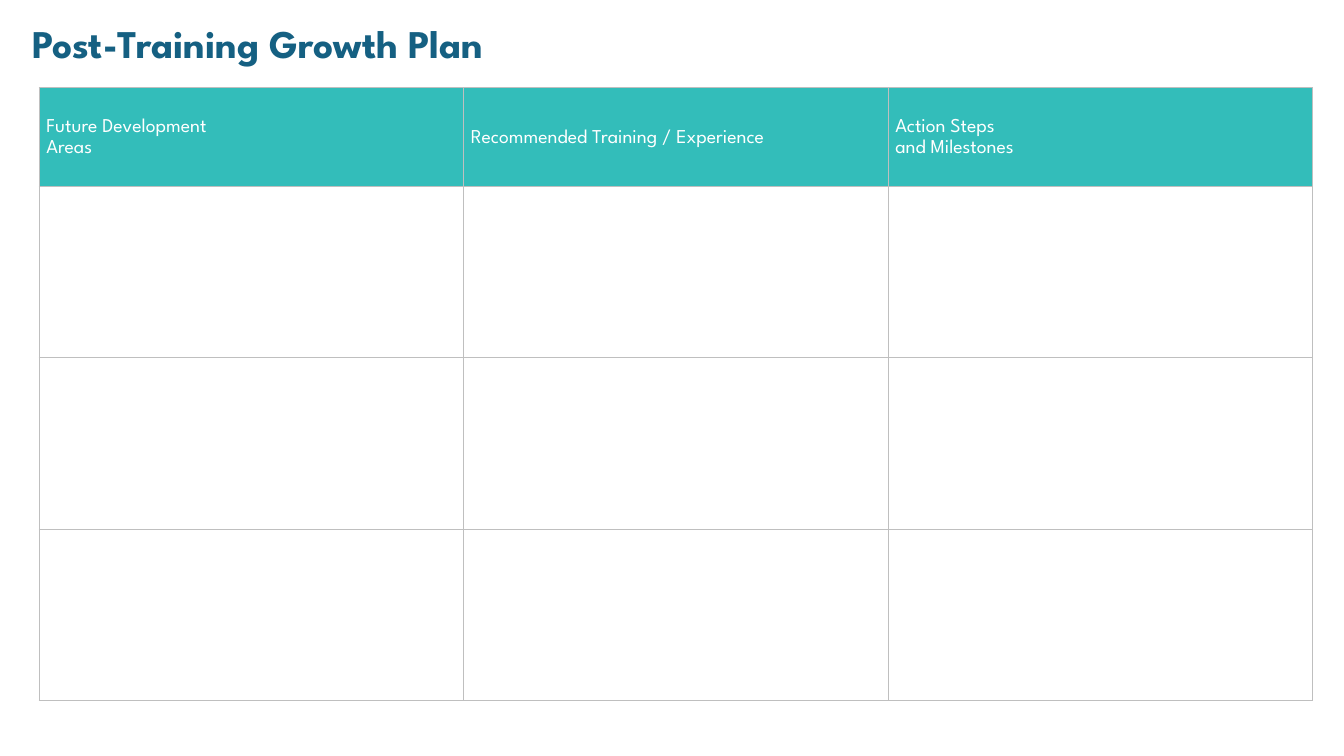
from lxml.etree import SubElement
from pptx import Presentation
from pptx.dml.color import RGBColor
from pptx.enum.text import MSO_ANCHOR as Anchor, MSO_AUTO_SIZE as AutoSize
from pptx.oxml.ns import qn
from pptx.util import Inches, Pt

TITLE = "Post-Training Growth Plan"
HEADERS = [
    "Future Development \vAreas",
    "Recommended Training / Experience",
    "Action Steps \vand Milestones",
]
EMPTY_ROWS = 3
FONT = "League Spartan"
COLORS = {"title": "156082", "header": "33BDBA", "header_text": "FFFFFF", "border": "BFBFBF"}
COLUMN_WIDTH, HEADER_HEIGHT, ROW_HEIGHT = 4.21, 0.98, 1.7


def style_font(font, size, color, bold=False):
    font.name = FONT
    font.size = Pt(size)
    font.bold = bold
    font.color.rgb = RGBColor.from_string(COLORS[color])


def add_borders(cell):
    properties = cell._tc.get_or_add_tcPr()
    for position, side in enumerate(("lnL", "lnR", "lnT", "lnB")):
        line = SubElement(properties, qn(f"a:{side}"), w=str(Pt(1)))
        fill = SubElement(line, qn("a:solidFill"))
        SubElement(fill, qn("a:srgbClr"), val=COLORS["border"])
        properties.insert(position, line)


def add_title(slide):
    box = slide.shapes.add_textbox(Inches(0.22), Inches(0.14), Inches(8.08), Inches(0.57))
    frame = box.text_frame
    frame.word_wrap = True
    frame.auto_size = AutoSize.SHAPE_TO_FIT_TEXT
    frame.text = TITLE
    style_font(frame.paragraphs[0].font, 28, "title", bold=True)


def add_plan_table(slide):
    heights = [HEADER_HEIGHT] + [ROW_HEIGHT] * EMPTY_ROWS
    table = slide.shapes.add_table(
        len(heights), len(HEADERS), Inches(0.39), Inches(0.87),
        Inches(COLUMN_WIDTH * len(HEADERS)), Inches(sum(heights)),
    ).table
    table.horz_banding = False
    for column in table.columns:
        column.width = Inches(COLUMN_WIDTH)
    for row, height in zip(table.rows, heights):
        row.height = Inches(height)
    for cell in table.iter_cells():
        cell.fill.background()
        add_borders(cell)
    for cell, header in zip(table.rows[0].cells, HEADERS):
        cell.fill.solid()
        cell.fill.fore_color.rgb = RGBColor.from_string(COLORS["header"])
        cell.vertical_anchor = Anchor.MIDDLE
        cell.margin_left = cell.margin_right = Inches(0.07)
        cell.margin_top = cell.margin_bottom = 0
        cell.text = header
        paragraph = cell.text_frame.paragraphs[0]
        paragraph.line_spacing = 1.15
        paragraph.space_after = Pt(8)
        style_font(paragraph.font, 14, "header_text")


def main():
    presentation = Presentation()
    presentation.slide_width = Inches(13.33)
    presentation.slide_height = Inches(7.5)
    slide = presentation.slides.add_slide(presentation.slide_layouts[6])
    add_title(slide)
    add_plan_table(slide)
    presentation.save("out.pptx")


if __name__ == "__main__":
    main()
